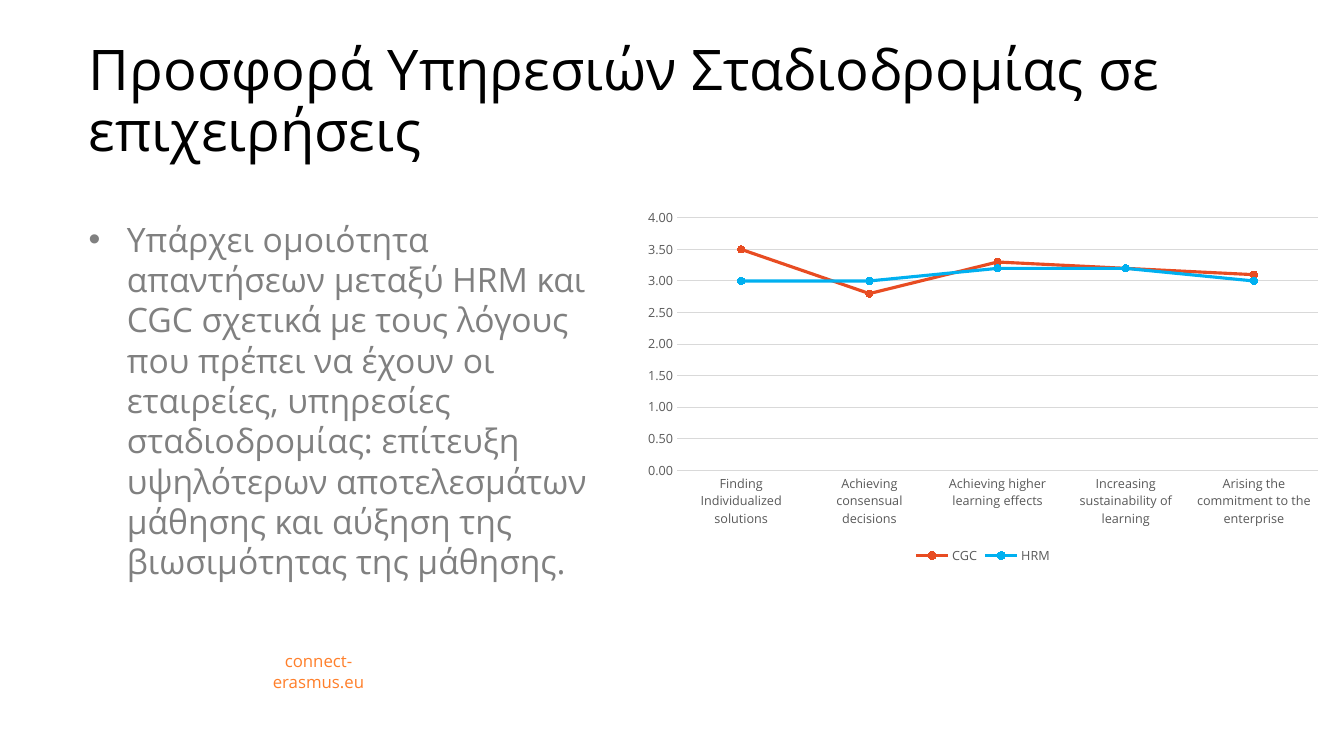
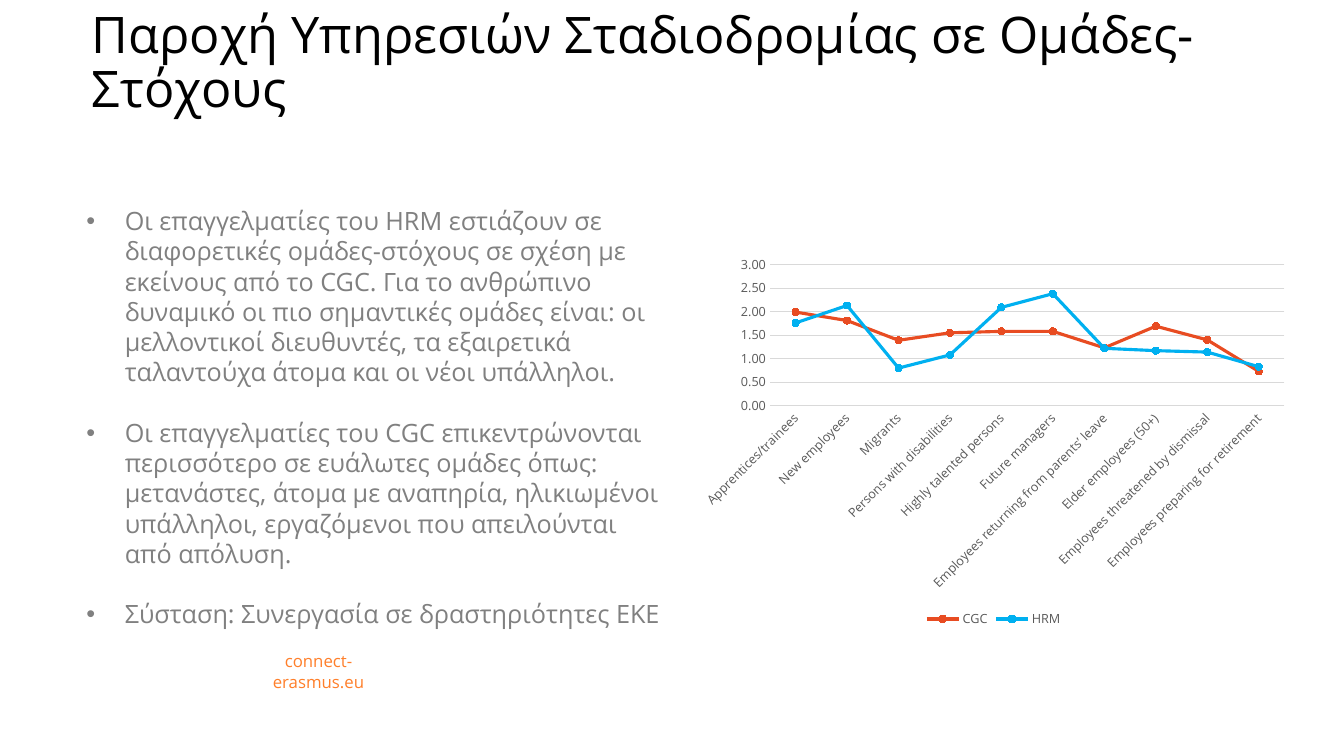
from dataclasses import dataclass

from lxml.etree import SubElement
from pptx import Presentation
from pptx.chart.axis import CategoryAxis, ValueAxis
from pptx.chart.data import CategoryChartData
from pptx.dml.color import RGBColor
from pptx.enum.chart import XL_CHART_TYPE, XL_LEGEND_POSITION, XL_MARKER_STYLE, XL_TICK_MARK
from pptx.enum.text import MSO_ANCHOR, MSO_AUTO_SIZE, PP_ALIGN
from pptx.oxml.ns import qn
from pptx.slide import Slide
from pptx.text.text import Font, TextFrame, _Paragraph
from pptx.util import Emu, Inches, Pt


@dataclass(frozen=True)
class Theme:
    font: str = "Open Sans"
    title: RGBColor = RGBColor(0x00, 0x00, 0x00)
    body: RGBColor = RGBColor(0x80, 0x80, 0x80)
    footer: RGBColor = RGBColor(0xFF, 0x7F, 0x2A)
    chart_text: RGBColor = RGBColor(0x59, 0x59, 0x59)
    grid: RGBColor = RGBColor(0xD9, 0xD9, 0xD9)
    series: tuple[RGBColor, ...] = (RGBColor(0xE8, 0x4C, 0x22), RGBColor(0x00, 0xB0, 0xF0))
    footer_size: float = 12
    chart_size: float = 9
    grid_width: float = 0.75
    series_width: float = 2.25
    marker_size: int = 5


THEME = Theme()


@dataclass(frozen=True)
class Box:
    left: float
    top: float
    width: float
    height: float

    def lengths(self) -> tuple[Emu, Emu, Emu, Emu]:
        return Inches(self.left), Inches(self.top), Inches(self.width), Inches(self.height)


@dataclass(frozen=True)
class Ratings:
    """Mean scores per category; label_angle is in degrees, or None for level labels."""
    box: Box
    categories: tuple[str, ...]
    scores: dict[str, tuple[float, ...]]
    top_score: float
    label_angle: int | None = None


@dataclass(frozen=True)
class Finding:
    title: str
    title_box: Box
    title_size: float
    points: tuple[str, ...]
    points_box: Box
    points_size: float
    ratings: Ratings


FOOTER = "connect-erasmus.eu"
FOOTER_BOX = Box(2.28, 6.51, 1.76, 0.3)
BULLET_INDENT = Inches(0.38)
POINT_GAP = Pt(21.6)

FINDINGS = (
    Finding(
        title="Προσφορά Υπηρεσιών Σταδιοδρομίας σε επιχειρήσεις",
        title_box=Box(0.78, 0.07, 12.21, 1.6),
        title_size=40,
        points=(
            "Υπάρχει ομοιότητα απαντήσεων μεταξύ HRM και CGC σχετικά με τους λόγους που "
            "πρέπει να έχουν οι εταιρείες, υπηρεσίες σταδιοδρομίας: επίτευξη υψηλότερων "
            "αποτελεσμάτων μάθησης και αύξηση της βιωσιμότητας της μάθησης.",
        ),
        points_box=Box(0.78, 2.12, 5.52, 4.88),
        points_size=24,
        ratings=Ratings(
            box=Box(6.29, 2, 6.92, 3.64),
            categories=(
                "Finding Individualized solutions",
                "Achieving consensual decisions",
                "Achieving higher learning effects",
                "Increasing sustainability of learning",
                "Arising the commitment to the enterprise",
            ),
            scores={"CGC": (3.5, 2.8, 3.3, 3.2, 3.1), "HRM": (3, 3, 3.2, 3.2, 3)},
            top_score=4,
        ),
    ),
    Finding(
        title="Παροχή Υπηρεσιών Σταδιοδρομίας σε Ομάδες-Στόχους",
        title_box=Box(0.81, 0.25, 12.08, 0.98),
        title_size=36,
        points=(
            "Οι επαγγελματίες του HRM εστιάζουν σε διαφορετικές ομάδες-στόχους σε σχέση με "
            "εκείνους από το CGC. Για το ανθρώπινο δυναμικό οι πιο σημαντικές ομάδες είναι: "
            "οι μελλοντικοί διευθυντές, τα εξαιρετικά ταλαντούχα άτομα και οι νέοι υπάλληλοι.",
            "Οι επαγγελματίες του CGC επικεντρώνονται περισσότερο σε ευάλωτες ομάδες όπως: "
            "μετανάστες, άτομα με αναπηρία, ηλικιωμένοι υπάλληλοι, εργαζόμενοι που "
            "απειλούνται από απόλυση.",
            "Σύσταση: Συνεργασία σε δραστηριότητες ΕΚΕ",
        ),
        points_box=Box(0.76, 1.99, 5.9, 5.26),
        points_size=18,
        ratings=Ratings(
            box=Box(6.85, 2.46, 6.01, 3.81),
            categories=(
                "Apprentices/trainees",
                "New employees",
                "Migrants",
                "Persons with disabilities",
                "Highly talented persons",
                "Future managers",
                "Employees returning from parents’ leave",
                "Elder employees (50+)",
                "Employees threatened by dismissal",
                "Employees preparing for retirement",
            ),
            scores={
                "CGC": (1.99, 1.81, 1.39, 1.55, 1.58, 1.58, 1.23, 1.69, 1.4, 0.73),
                "HRM": (1.76, 2.13, 0.8, 1.08, 2.09, 2.38, 1.22, 1.17, 1.14, 0.83),
            },
            top_score=3,
            label_angle=-45,
        ),
    ),
)


def style_font(font: Font, size: float, color: RGBColor) -> None:
    font.name = THEME.font
    font.size = Pt(size)
    font.color.rgb = color


def add_text(paragraph: _Paragraph, text: str, size: float, color: RGBColor) -> None:
    run = paragraph.add_run()
    run.text = text
    style_font(run.font, size, color)


def prepare_frame(frame: TextFrame, anchor: MSO_ANCHOR) -> None:
    frame.word_wrap = True
    frame.auto_size = MSO_AUTO_SIZE.NONE
    frame.vertical_anchor = anchor


def add_bullet(paragraph: _Paragraph) -> None:
    properties = paragraph._p.get_or_add_pPr()
    properties.set("marL", str(BULLET_INDENT))
    properties.set("indent", str(-BULLET_INDENT))
    SubElement(properties, qn("a:buFont"), typeface="Arial")
    SubElement(properties, qn("a:buChar"), char="•")


def set_title(slide: Slide, finding: Finding) -> None:
    title = slide.shapes.title
    title.left, title.top, title.width, title.height = finding.title_box.lengths()
    prepare_frame(title.text_frame, MSO_ANCHOR.BOTTOM)
    paragraph = title.text_frame.paragraphs[0]
    paragraph.alignment = PP_ALIGN.LEFT
    paragraph.line_spacing = 0.9
    add_text(paragraph, finding.title, finding.title_size, THEME.title)


def add_points(slide: Slide, finding: Finding) -> None:
    frame = slide.shapes.add_textbox(*finding.points_box.lengths()).text_frame
    prepare_frame(frame, MSO_ANCHOR.TOP)
    for index, point in enumerate(finding.points):
        paragraph = frame.add_paragraph() if index else frame.paragraphs[0]
        add_bullet(paragraph)
        if index:
            paragraph.space_before = POINT_GAP
        add_text(paragraph, point, finding.points_size, THEME.body)


def add_footer(slide: Slide) -> None:
    frame = slide.shapes.add_textbox(*FOOTER_BOX.lengths()).text_frame
    prepare_frame(frame, MSO_ANCHOR.MIDDLE)
    paragraph = frame.paragraphs[0]
    paragraph.alignment = PP_ALIGN.CENTER
    add_text(paragraph, FOOTER, THEME.footer_size, THEME.footer)


def style_axis(axis: CategoryAxis | ValueAxis) -> None:
    axis.major_tick_mark = XL_TICK_MARK.NONE
    axis.minor_tick_mark = XL_TICK_MARK.NONE
    style_font(axis.tick_labels.font, THEME.chart_size, THEME.chart_text)


def add_ratings(slide: Slide, ratings: Ratings) -> None:
    scores = CategoryChartData(number_format="###0.00")
    scores.categories = ratings.categories
    for group, values in ratings.scores.items():
        scores.add_series(group, values)
    chart = slide.shapes.add_chart(
        XL_CHART_TYPE.LINE_MARKERS, *ratings.box.lengths(), scores
    ).chart
    chart.has_title = False
    style_font(chart.font, THEME.chart_size, THEME.chart_text)

    chart.has_legend = True
    chart.legend.position = XL_LEGEND_POSITION.BOTTOM
    chart.legend.include_in_layout = False
    style_font(chart.legend.font, THEME.chart_size, THEME.chart_text)

    groups = chart.category_axis
    style_axis(groups)
    if ratings.label_angle is not None:
        body = groups._element.find(f"{qn('c:txPr')}/{qn('a:bodyPr')}")
        body.set("rot", str(ratings.label_angle * 60000))
        body.set("vert", "horz")

    scale = chart.value_axis
    style_axis(scale)
    scale.minimum_scale = 0
    scale.maximum_scale = ratings.top_score
    scale.major_unit = 0.5
    scale.tick_labels.number_format = "###0.00"
    scale.tick_labels.number_format_is_linked = False
    scale.format.line.fill.background()
    for line in (groups.format.line, scale.major_gridlines.format.line):
        line.color.rgb = THEME.grid
        line.width = Pt(THEME.grid_width)

    plot = chart.plots[0]
    plot.vary_by_categories = False
    for group, color in zip(plot.series, THEME.series):
        group.smooth = False
        group.format.line.color.rgb = color
        group.format.line.width = Pt(THEME.series_width)
        marker = group.marker
        marker.style = XL_MARKER_STYLE.CIRCLE
        marker.size = THEME.marker_size
        marker.format.fill.solid()
        marker.format.fill.fore_color.rgb = color
        marker.format.line.color.rgb = color


def main() -> None:
    deck = Presentation()
    deck.slide_width, deck.slide_height = Inches(13.33), Inches(7.5)
    title_only = deck.slide_layouts.get_by_name("Title Only")
    for finding in FINDINGS:
        slide = deck.slides.add_slide(title_only)
        set_title(slide, finding)
        add_points(slide, finding)
        add_footer(slide)
        add_ratings(slide, finding.ratings)
    deck.save("out.pptx")


if __name__ == "__main__":
    main()
